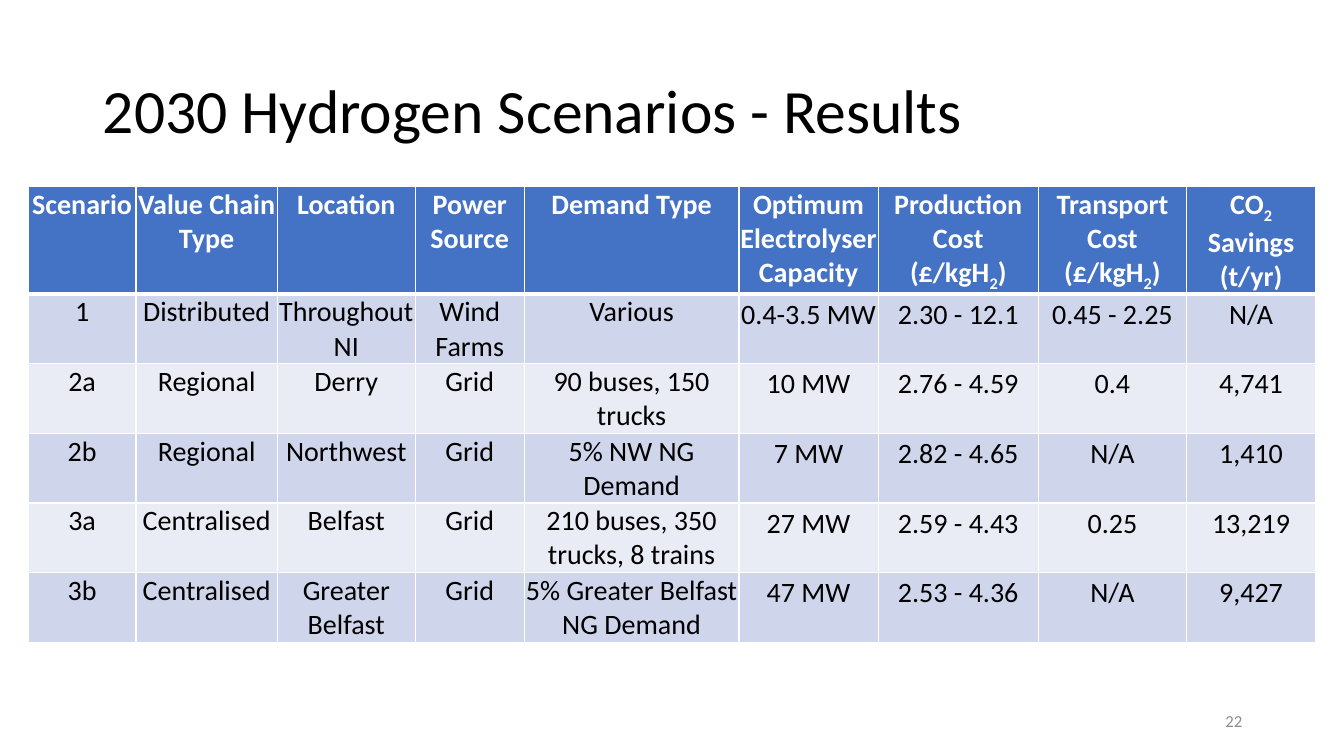
from lxml import etree
from pptx import Presentation
from pptx.dml.color import RGBColor
from pptx.enum import text
from pptx.oxml import ns
from pptx.util import Inches, Pt

TITLE = "2030 Hydrogen Scenarios - Results"
PAGE_NUMBER = "22"
# A ₂ marks a subscript 2; a line break starts a new paragraph.
HEADERS = ["Scenario", "Value Chain Type", "Location", "Power Source", "Demand Type",
           "Optimum Electrolyser Capacity", "Production Cost\n(£/kgH₂)",
           "Transport Cost\n(£/kgH₂)", "CO₂ Savings\n(t/yr)"]
SCENARIOS = [
    ["1", "Distributed", "Throughout NI", "Wind Farms", "Various",
     "0.4-3.5 MW", "2.30 - 12.1", "0.45 - 2.25", "N/A"],
    ["2a", "Regional", "Derry", "Grid", "90 buses, 150 trucks",
     "10 MW", "2.76 - 4.59", "0.4", "4,741"],
    ["2b", "Regional", "Northwest", "Grid", "5% NW NG Demand",
     "7 MW", "2.82 - 4.65", "N/A", "1,410"],
    ["3a", "Centralised", "Belfast", "Grid", "210 buses, 350 trucks, 8 trains",
     "27 MW", "2.59 - 4.43", "0.25", "13,219"],
    ["3b", "Centralised", "Greater Belfast", "Grid", "5% Greater Belfast NG Demand",
     "47 MW", "2.53 - 4.36", "N/A", "9,427"],
]
COLUMN_WIDTHS = [1.07, 1.4, 1.37, 1.08, 2.13, 1.38, 1.59, 1.47, 1.28]
HEADER_HEIGHT, ROW_HEIGHT = 0.75, 0.41
TABLE_HEIGHT = 4.38
FIRST_RESULT_COLUMN = 5
HEADER_FILL, BAND_FILLS = "4472C4", ["CFD5EA", "E9EBF5"]


def color(value):
    return RGBColor.from_string(value)


def set_font(paragraph, size, value, bold=False):
    font = paragraph.font
    font.name, font.size, font.bold = "Calibri", Pt(size), bold
    font.color.rgb = color(value)


def add_runs(paragraph, content):
    """Write content, turning each ₂ into a subscript run."""
    for index, part in enumerate(content.split("₂")):
        if index:
            subscript = paragraph.add_run()
            subscript.text = "2"
            subscript.font._element.set("baseline", "-25000")
        if part:
            paragraph.add_run().text = part


def set_borders(cell, top, bottom):
    properties = cell._tc.get_or_add_tcPr()
    for side, width in (("L", 1), ("R", 1), ("T", top), ("B", bottom)):
        line = etree.SubElement(properties, ns.qn(f"a:ln{side}"), w=str(Pt(width)))
        fill = etree.SubElement(line, ns.qn("a:solidFill"))
        etree.SubElement(fill, ns.qn("a:srgbClr"), val="FFFFFF")


def fill_cell(cell, content, row, column):
    is_header = row == 0
    is_result = not is_header and column >= FIRST_RESULT_COLUMN
    set_borders(cell, top=3 if row == 1 else 1, bottom=3 if is_header else 1)
    cell.fill.solid()
    cell.fill.fore_color.rgb = color(HEADER_FILL if is_header else BAND_FILLS[(row - 1) % 2])
    cell.margin_left = cell.margin_right = cell.margin_top = Inches(0.01)
    cell.margin_bottom = Inches(0.01 if is_result else 0)
    frame = cell.text_frame
    for index, line in enumerate(content.split("\n")):
        paragraph = frame.add_paragraph() if index else frame.paragraphs[0]
        paragraph.alignment = text.PP_ALIGN.CENTER
        if is_result:
            paragraph.line_spacing, paragraph.space_after = 1.07, Pt(8)
        set_font(paragraph, 20, "FFFFFF" if is_header else "000000", is_header)
        add_runs(paragraph, line)


def add_results_table(slide):
    rows = [HEADERS] + SCENARIOS
    graphic_frame = slide.shapes.add_table(
        len(rows), len(HEADERS), Inches(0.28), Inches(1.85),
        Inches(sum(COLUMN_WIDTHS)), Inches(TABLE_HEIGHT))
    table = graphic_frame.table
    for column, width in zip(table.columns, COLUMN_WIDTHS):
        column.width = Inches(width)
    for row, contents in enumerate(rows):
        table.rows[row].height = Inches(ROW_HEIGHT if row else HEADER_HEIGHT)
        for column, content in enumerate(contents):
            fill_cell(table.cell(row, column), content, row, column)
    graphic_frame.height = Inches(TABLE_HEIGHT)


def add_title(slide):
    title = slide.shapes.title
    title.left, title.top = Inches(0.92), Inches(0.4)
    title.width, title.height = Inches(11.5), Inches(1.45)
    frame = title.text_frame
    frame.text = TITLE
    frame.auto_size = text.MSO_AUTO_SIZE.NONE
    frame.vertical_anchor = text.MSO_ANCHOR.MIDDLE
    paragraph = frame.paragraphs[0]
    paragraph.alignment = text.PP_ALIGN.LEFT
    paragraph.line_spacing = 0.9
    set_font(paragraph, 44, "000000")


def add_page_number(slide):
    box = slide.shapes.add_textbox(Inches(9.42), Inches(6.95), Inches(3), Inches(0.4))
    frame = box.text_frame
    frame.word_wrap = True
    frame.vertical_anchor = text.MSO_ANCHOR.MIDDLE
    paragraph = frame.paragraphs[0]
    paragraph.text = PAGE_NUMBER
    paragraph.alignment = text.PP_ALIGN.RIGHT
    set_font(paragraph, 12, "8C8C8C")


def main():
    presentation = Presentation()
    presentation.slide_width, presentation.slide_height = Inches(13.33), Inches(7.5)
    slide = presentation.slides.add_slide(presentation.slide_layouts[5])
    add_title(slide)
    add_results_table(slide)
    add_page_number(slide)
    presentation.save("out.pptx")


if __name__ == "__main__":
    main()
